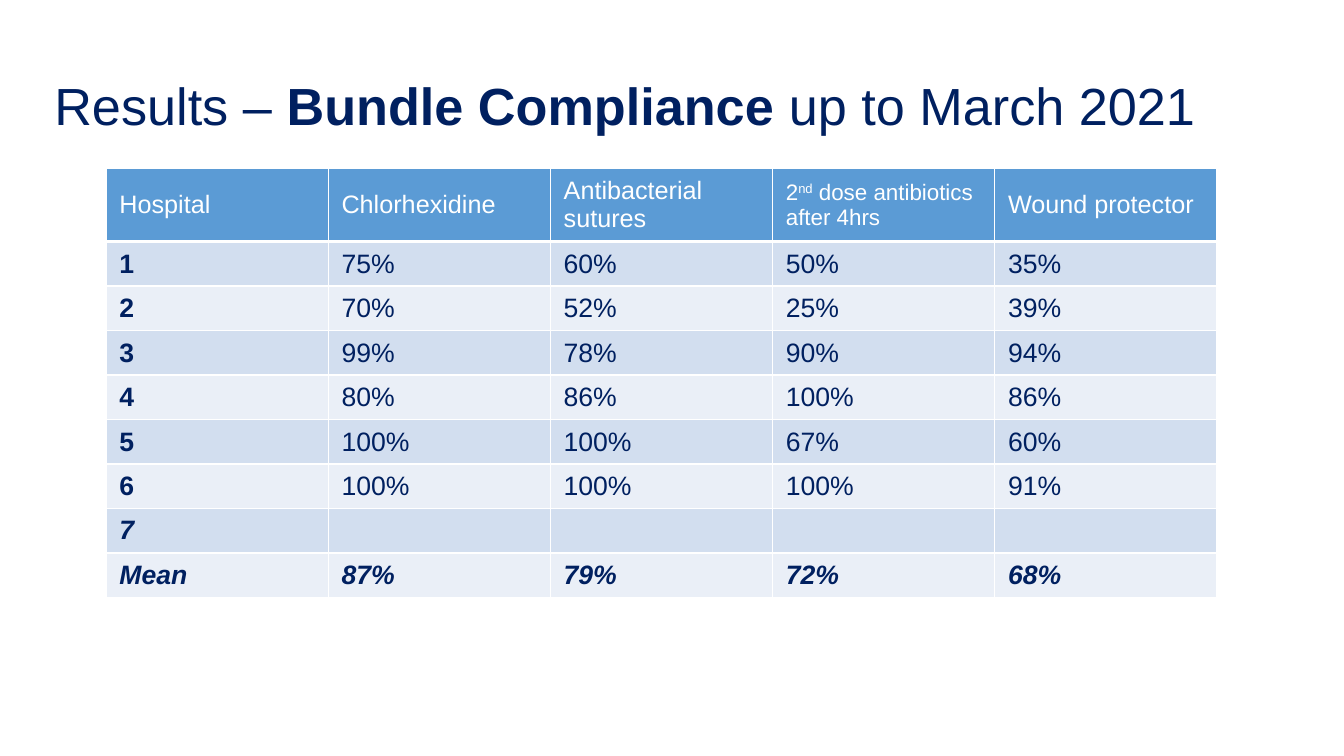
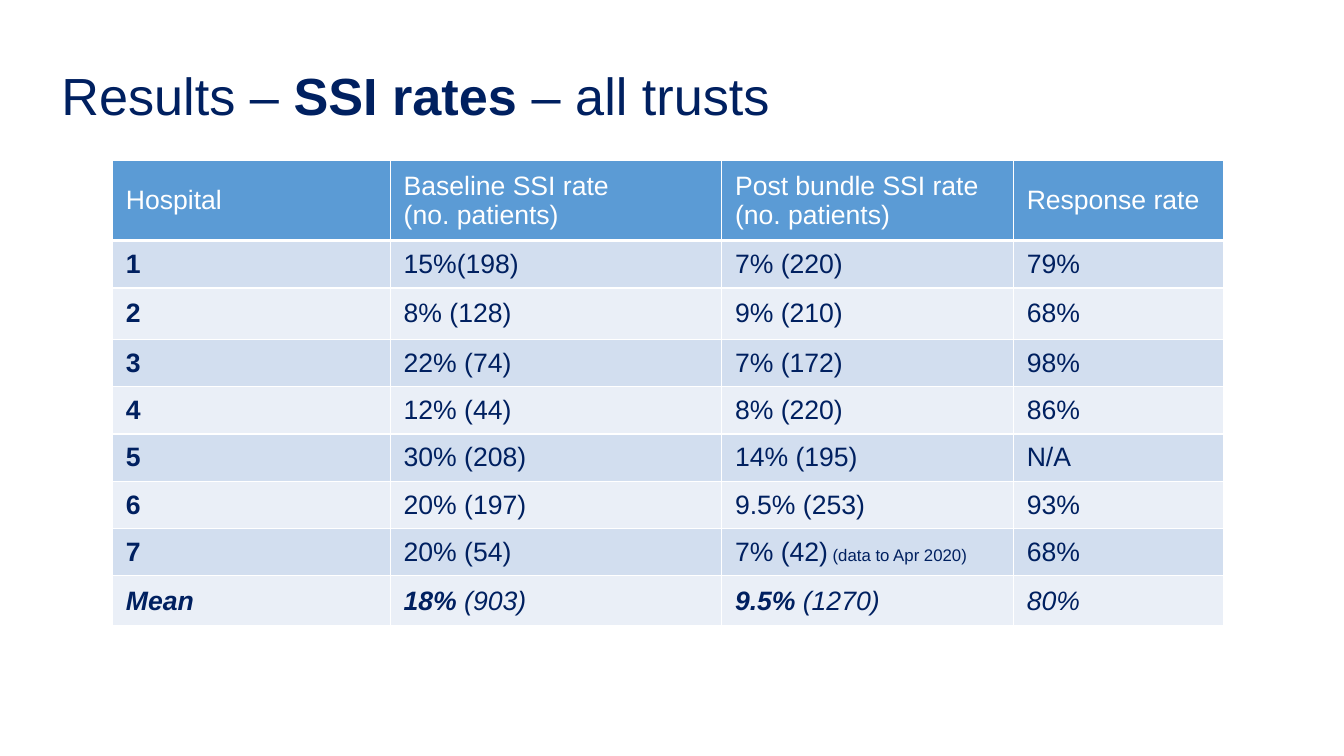
from lxml import etree
from pptx import Presentation
from pptx.dml.color import RGBColor
from pptx.enum.text import MSO_ANCHOR
from pptx.oxml.ns import qn
from pptx.util import Pt

MIDDLE = MSO_ANCHOR.MIDDLE
TOP = MSO_ANCHOR.TOP

NAVY = RGBColor(0x00, 0x20, 0x60)
WHITE = RGBColor(0xFF, 0xFF, 0xFF)
HEADER_BLUE = RGBColor(0x5B, 0x9B, 0xD5)
BAND_DARK = RGBColor(0xD2, 0xDE, 0xEF)
BAND_LIGHT = RGBColor(0xEA, 0xEF, 0xF7)

FONT = "Arial"
BODY_SIZE = Pt(19)
TITLE_FORMAT = {"name": FONT, "size": Pt(37.3), "bold": False, "color": NAVY}
HEADER_FORMAT = {"name": FONT, "size": BODY_SIZE, "bold": False, "color": WHITE}
BODY_FORMAT = {"name": FONT, "size": BODY_SIZE, "bold": False, "color": NAVY}
BOLD = {"bold": True}
ITALIC = {"italic": True}
BOLD_ITALIC = BOLD | ITALIC
SMALL_HEADER = {"size": Pt(16)}

TITLE_MARGINS = {"margin_left": Pt(4.8), "margin_right": Pt(4.8),
                 "margin_top": Pt(7), "margin_bottom": Pt(3.6)}
CELL_MARGINS = {"margin_left": Pt(9.6), "margin_right": Pt(9.6),
                "margin_top": Pt(4.5), "margin_bottom": Pt(4.5)}
BORDER_TAGS = ("a:lnL", "a:lnR", "a:lnT", "a:lnB")

COMPLIANCE_ROWS = [
    ["Hospital", "Chlorhexidine", "Antibacterial sutures",
     [("2", SMALL_HEADER), ("nd", SMALL_HEADER | {"baseline": 30}),
      (" dose antibiotics after 4hrs", SMALL_HEADER)],
     "Wound protector"],
    ["1", "75%", "60%", "50%", "35%"],
    ["2", "70%", "52%", "25%", "39%"],
    ["3", "99%", "78%", "90%", "94%"],
    ["4", "80%", "86%", "100%", "86%"],
    ["5", "100%", "100%", "67%", "60%"],
    ["6", "100%", "100%", "100%", "91%"],
    [[("7", ITALIC)], "", "", "", ""],
    [[(text, BOLD_ITALIC)] for text in ("Mean", "87%", "79%", "72%", "68%")],
]

SSI_ROWS = [
    ["Hospital", "Baseline SSI rate\n(no. patients)",
     "Post bundle SSI rate (no. patients)", "Response rate"],
    ["1", "15%(198)", "7% (220)", "79%"],
    ["2", "8% (128)", "9% (210)", "68%"],
    ["3", "22% (74)", "7% (172)", "98%"],
    ["4", "12% (44)", "8% (220)", "86%"],
    ["5", "30% (208)", "14% (195)", "N/A"],
    ["6", "20% (197)", "9.5% (253)", "93%"],
    ["7", "20% (54)",
     [("7% (42)", {}), (" (data to Apr 2020)", {"size": Pt(12)})], "68%"],
    [[("Mean", ITALIC)],
     [("18% ", BOLD_ITALIC), ("(903)", ITALIC)],
     [("9.5% ", BOLD_ITALIC), ("(1270)", ITALIC)],
     [("80%", ITALIC)]],
]


def set_attributes(target, values):
    for name, value in values.items():
        setattr(target, name, value)


def add_run(paragraph, text, text_format):
    run = paragraph.add_run()
    run.text = text
    for name, value in text_format.items():
        if name == "color":
            run.font.color.rgb = value
        elif name == "baseline":
            run._r.get_or_add_rPr().set("baseline", str(value * 1000))
        else:
            setattr(run.font, name, value)


def write_text(text_frame, content, base_format):
    """Write a string (one paragraph a line) or one paragraph of (text, changes) runs."""
    if isinstance(content, str):
        paragraphs = [[(line, {})] for line in content.split("\n") if line]
    else:
        paragraphs = [content]
    for index, runs in enumerate(paragraphs):
        paragraph = text_frame.add_paragraph() if index else text_frame.paragraphs[0]
        for text, changes in runs:
            add_run(paragraph, text, base_format | changes)


def add_title(slide, left, top, width, runs):
    text_frame = slide.shapes.add_textbox(left, top, width, Pt(60.5)).text_frame
    set_attributes(text_frame, TITLE_MARGINS | {"word_wrap": True, "vertical_anchor": TOP})
    write_text(text_frame, runs, TITLE_FORMAT)
    text_frame.paragraphs[0].line_spacing = 0.9


def add_borders(cell, bottom_width):
    properties = cell._tc.get_or_add_tcPr()
    for tag in BORDER_TAGS:
        width = bottom_width if tag == "a:lnB" else Pt(1)
        line = etree.SubElement(properties, qn(tag), w=str(width))
        fill = etree.SubElement(line, qn("a:solidFill"))
        etree.SubElement(fill, qn("a:srgbClr"), val=str(WHITE))


def add_results_table(slide, left, top, widths, heights, rows, header_size=BODY_SIZE):
    table = slide.shapes.add_table(
        len(rows), len(widths), left, top, sum(widths), sum(heights)).table
    table.horz_banding = False
    for column, width in zip(table.columns, widths):
        column.width = width
    for row_index, (row, height) in enumerate(zip(rows, heights)):
        table.rows[row_index].height = height
        is_header = row_index == 0
        if is_header:
            color, row_format = HEADER_BLUE, HEADER_FORMAT | {"size": header_size}
        else:
            color = BAND_DARK if row_index % 2 else BAND_LIGHT
            row_format = BODY_FORMAT
        for column_index, content in enumerate(row):
            cell = table.cell(row_index, column_index)
            set_attributes(cell, CELL_MARGINS | {"vertical_anchor": MIDDLE})
            add_borders(cell, Pt(3) if is_header else Pt(1))
            cell.fill.solid()
            cell.fill.fore_color.rgb = color
            is_label = column_index == 0 and not is_header
            write_text(cell.text_frame, content, row_format | (BOLD if is_label else {}))


def add_compliance_slide(slide):
    add_title(slide, Pt(34), Pt(50.4), Pt(877),
              [("Results – ", {}), ("Bundle Compliance ", BOLD), ("up to March 2021", {})])
    add_results_table(slide, Pt(75.7), Pt(120.4), [Pt(158.7)] * 5,
                      [Pt(50)] + [Pt(30.7)] * 8, COMPLIANCE_ROWS, header_size=Pt(18))


def add_ssi_slide(slide):
    add_title(slide, Pt(39), Pt(43.6), Pt(760),
              [("Results – ", {}), ("SSI rates", BOLD), (" – all trusts", {})])
    add_results_table(slide, Pt(80.4), Pt(114.8),
                      [Pt(198.4), Pt(236.7), Pt(208.4), Pt(150)],
                      [Pt(57), Pt(34), Pt(36.6)] + [Pt(33.8)] * 5 + [Pt(35.7)], SSI_ROWS)


def main():
    presentation = Presentation()
    presentation.slide_width = Pt(960)
    presentation.slide_height = Pt(540)
    blank_layout = presentation.slide_layouts[6]
    for build_slide in (add_compliance_slide, add_ssi_slide):
        build_slide(presentation.slides.add_slide(blank_layout))
    presentation.save("out.pptx")


if __name__ == "__main__":
    main()
